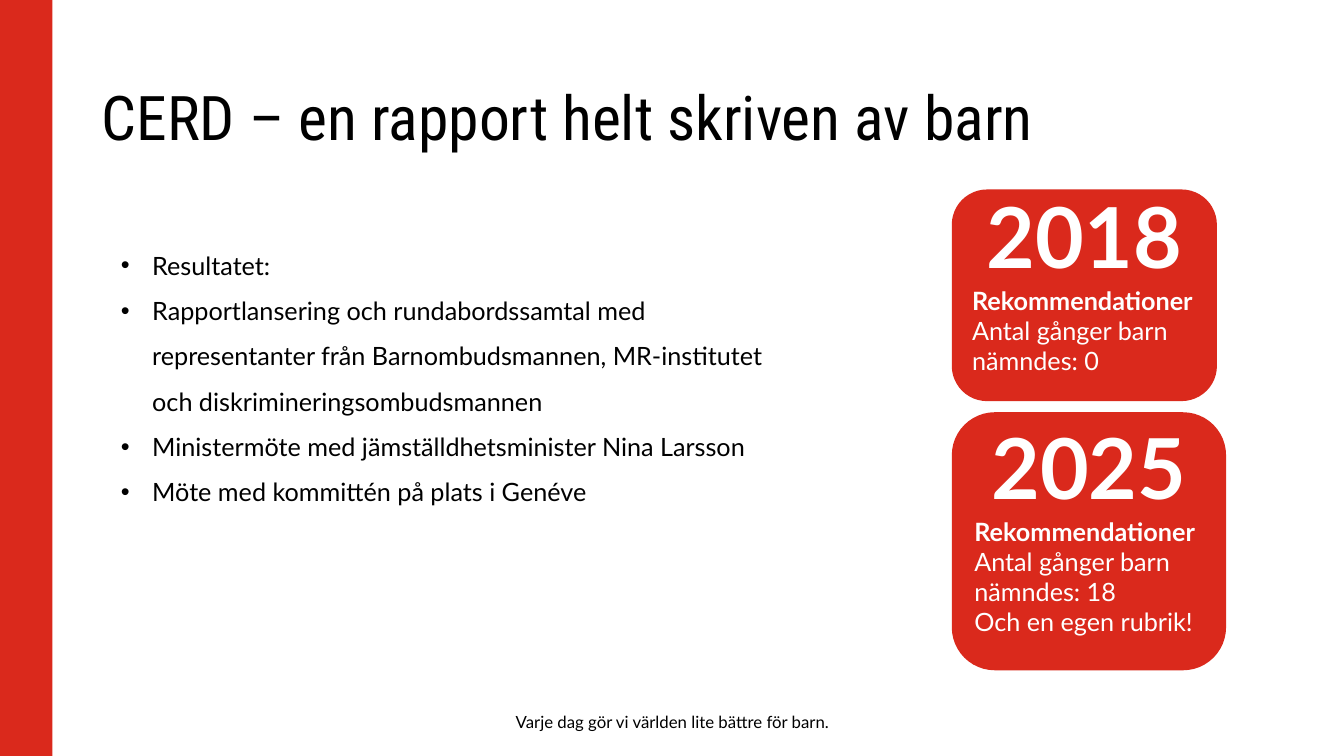
from dataclasses import dataclass

from lxml.etree import SubElement
from pptx import Presentation
from pptx.dml.color import RGBColor
from pptx.enum.shapes import MSO_SHAPE as Shape
from pptx.enum.text import MSO_ANCHOR as Anchor, PP_ALIGN as Align
from pptx.oxml.ns import qn
from pptx.util import Inches, Pt

RED = RGBColor(0xDA, 0x29, 0x1C)
BLACK = RGBColor(0, 0, 0)
WHITE = RGBColor(0xFF, 0xFF, 0xFF)
BODY_FONT = "Lato"
TITLE_FONT = "Roboto Condensed"

BULLETS = [
    "Resultatet:",
    "Rapportlansering och rundabordssamtal med representanter från "
    "Barnombudsmannen, MR-institutet och diskrimineringsombudsmannen",
    "Ministermöte med jämställdhetsminister Nina Larsson",
    "Möte med kommittén på plats i Genéve",
]


@dataclass
class YearCard:
    year: str
    top: float
    width: float
    height: float
    heading: str
    lines: list[str]


CARDS = [
    YearCard("2018", 1.88, 2.63, 2.1, "Rekommendationer ",
             ["Antal gånger barn nämndes: 0"]),
    YearCard("2025", 4.09, 2.72, 2.56, "Rekommendationer ",
             ["Antal gånger barn nämndes: 18", "Och en egen rubrik!"]),
]


def style(r, size: float, color: RGBColor, font: str = BODY_FONT, bold: bool = False) -> None:
    r.font.name = font
    r.font.size = Pt(size)
    r.font.color.rgb = color
    r.font.bold = bold


def add_run(p, text: str, size: float, color: RGBColor, bold: bool = False) -> None:
    r = p.add_run()
    r.text = text
    style(r, size, color, bold=bold)


def add_text(slide, box: tuple, text: str, size: float, font: str = BODY_FONT,
             anchor: Anchor = Anchor.MIDDLE):
    tf = slide.shapes.add_textbox(*map(Inches, box)).text_frame
    tf.word_wrap = True
    tf.vertical_anchor = anchor
    tf.text = text
    for p in tf.paragraphs:
        style(p.runs[0], size, BLACK, font)
    return tf


def add_block(slide, shape: Shape, box: tuple):
    sp = slide.shapes.add_shape(shape, *map(Inches, box))
    sp.shadow.inherit = False
    sp.fill.solid()
    sp.fill.fore_color.rgb = RED
    sp.line.fill.background()
    return sp


def add_bullet(p) -> None:
    pPr = p._p.get_or_add_pPr()
    pPr.set("marL", str(Inches(0.31)))
    pPr.set("indent", str(Inches(-0.31)))
    SubElement(pPr, qn("a:buFont")).set("typeface", "Arial")
    SubElement(pPr, qn("a:buChar")).set("char", "•")


def add_card(slide, card: YearCard) -> None:
    sp = add_block(slide, Shape.ROUNDED_RECTANGLE, (9.44, card.top, card.width, card.height))
    tf = sp.text_frame
    tf.word_wrap = True
    tf.vertical_anchor = Anchor.MIDDLE
    # The larger bottom inset lifts the text above the middle
    tf.margin_top = 0
    tf.margin_bottom = Inches(0.3)

    p = tf.paragraphs[0]
    p.alignment = Align.CENTER
    add_run(p, card.year, 60, WHITE, bold=True)
    for i, line in enumerate(card.lines):
        p = tf.add_paragraph()
        p.alignment = Align.LEFT
        if i == 0:
            add_run(p, card.heading, 18, WHITE, bold=True)
        add_run(p, line, 18, WHITE)


def main() -> None:
    prs = Presentation()
    prs.slide_width, prs.slide_height = Inches(13.33), Inches(7.5)
    slide = prs.slides.add_slide(prs.slide_layouts[6])

    # Side band and title
    add_block(slide, Shape.RECTANGLE, (0, 0, 0.52, 7.5))
    tf = add_text(slide, (0.91, 0.7, 10.42, 0.99),
                  "CERD – en rapport helt skriven av barn", 44, TITLE_FONT)
    tf.paragraphs[0].line_spacing = 0.9

    # Results list
    tf = add_text(slide, (1.13, 2.29, 6.76, 4.36), "\n".join(BULLETS), 18, anchor=Anchor.TOP)
    tf.margin_left = tf.margin_right = Inches(0.07)
    tf.margin_top = tf.margin_bottom = Inches(0.04)
    for p in tf.paragraphs:
        add_bullet(p)
        p.line_spacing = 1.5

    # Year cards
    for card in CARDS:
        add_card(slide, card)

    # Footer
    tf = add_text(slide, (2.77, 7.06, 7.8, 0.2),
                  "Varje dag gör vi världen lite bättre för barn.", 12)
    tf.paragraphs[0].alignment = Align.CENTER

    prs.save("out.pptx")


if __name__ == "__main__":
    main()
